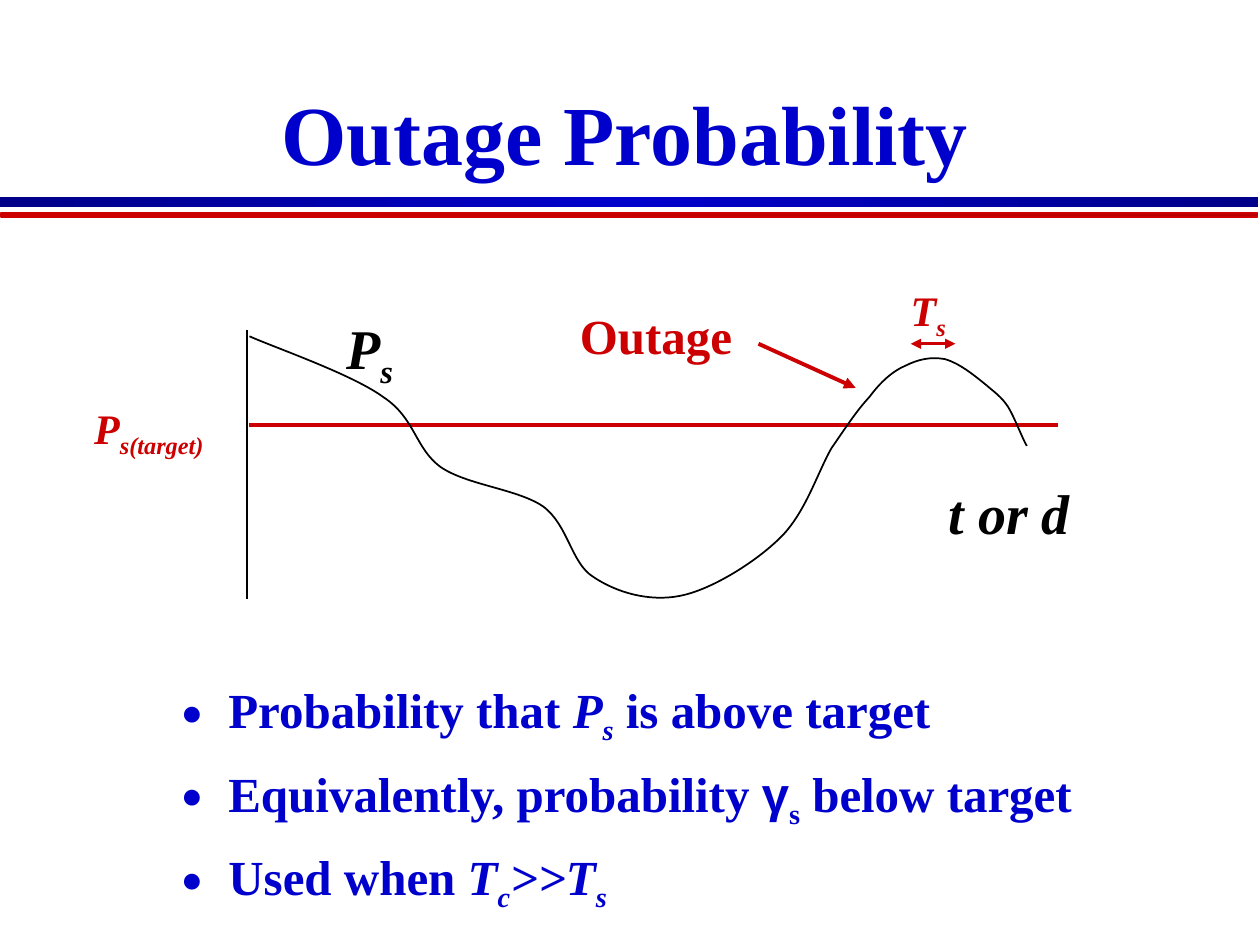
from copy import deepcopy
from itertools import chain

from lxml.etree import SubElement
from pptx import Presentation
from pptx.dml.color import RGBColor
from pptx.enum.shapes import MSO_CONNECTOR, MSO_SHAPE
from pptx.enum.text import MSO_ANCHOR, MSO_AUTO_SIZE, PP_ALIGN
from pptx.oxml.ns import qn
from pptx.util import Cm, Pt

BLUE = RGBColor(0x00, 0x00, 0xCC)
NAVY = RGBColor(0x00, 0x00, 0x89)
RED = RGBColor(0xCC, 0x00, 0x00)
DARK_RED = RGBColor(0xB9, 0x00, 0x00)
BLACK = RGBColor(0x00, 0x00, 0x00)
FONT = "Times New Roman"

# Content: each text is a list of (words, style); i = italic, s = subscript, g = Greek
TITLE = [("Outage Probability", "")]
POINTS = [
    [("Probability that ", ""), ("P", "i"), ("s", "is"), (" is above target", "")],
    [("Equivalently, probability ", ""), ("γ", "g"), ("s", "s"), (" below target", "")],
    [("Used when ", ""), ("T", "i"), ("c", "is"), (">>T", "i"), ("s", "is")],
]

# Labels: text, box in cm, size, colour, wrap
LABELS = [
    ([("P", "i"), ("s", "is")], (6.73, 6.2, 1.52, 1.6), 32, BLACK, False),
    ([("P", "i"), ("s(target)", "is")], (1.65, 7.98, 3.05, 1.27), 24, RED, False),
    ([("Outage", "")], (11.44, 6.03, 4.17, 1.45), 28, RED, True),
    ([("T", "i"), ("s", "is")], (18.11, 5.61, 1.32, 1.27), 24, RED, False),
    ([(" t or d", "i")], (18.59, 9.53, 3.3, 1.6), 32, BLACK, False),
]

# Lines: start, end in cm, colour, width, ends that carry an arrowhead
LINES = [
    ((4.98, 6.66), (4.98, 12.07), BLACK, 1, ()),
    ((5.02, 8.57), (21.33, 8.57), RED, 2.25, ()),
    ((15.29, 6.93), (17.25, 7.82), RED, 2.25, ("tailEnd",)),
    ((18.36, 6.93), (19.26, 6.93), RED, 1.5, ("headEnd", "tailEnd")),
]

# Received power over time: a start, then two control points and an end per segment
POWER_START = (5.03, 6.78)
POWER_SEGMENTS = [
    ((5.49, 6.99), (7.09, 7.54), (7.72, 8.0)),
    ((8.38, 8.43), (8.36, 9.04), (8.89, 9.42)),
    ((9.42, 9.78), (10.44, 9.86), (10.95, 10.21)),
    ((11.46, 10.59), (11.51, 11.35), (11.96, 11.63)),
    ((12.42, 11.94), (13.08, 12.14), (13.72, 12.01)),
    ((14.33, 11.89), (15.21, 11.35), (15.72, 10.85)),
    ((16.23, 10.36), (16.48, 9.53), (16.76, 9.04)),
    ((17.07, 8.59), (17.27, 8.28), (17.53, 8.0)),
    ((17.75, 7.7), (18.01, 7.47), (18.26, 7.37)),
    ((18.52, 7.24), (18.77, 7.19), (19.05, 7.24)),
    ((19.33, 7.32), (19.61, 7.54), (19.89, 7.77)),
]
TAIL_SEGMENTS = [
    ((20.04, 7.9), (20.19, 8.0), (20.32, 8.2)),
    ((20.45, 8.41), (20.62, 8.86), (20.7, 8.99)),
]


def place(shape, box):
    shape.left, shape.top, shape.width, shape.height = map(Cm, box)


def write(paragraph, parts, size, color, align=PP_ALIGN.LEFT):
    paragraph.alignment = align
    for words, style in parts:
        run = paragraph.add_run()
        run.text = words
        font = run.font
        font.name = "Arial" if "g" in style else FONT
        font.size, font.bold, font.italic = Pt(size), True, "i" in style
        font.color.rgb = color
        if "s" in style:
            run._r.get_or_add_rPr().set("baseline", "-25000")


def add_bullet(paragraph):
    props = paragraph._p.get_or_add_pPr()
    props.set("marL", str(Cm(0.96)))
    props.set("indent", str(-Cm(0.96)))
    SubElement(SubElement(props, qn("a:buClr")), qn("a:srgbClr"), val=str(BLUE))
    SubElement(props, qn("a:buSzPct"), val="75000")
    SubElement(props, qn("a:buFont"), typeface=FONT)
    SubElement(props, qn("a:buChar"), char="●")


def add_band(shapes, box, first, last):
    band = shapes.add_shape(MSO_SHAPE.RECTANGLE, *map(Cm, box))
    band.shadow.inherit = False
    band.fill.gradient()
    band.fill.gradient_angle = 0
    for stop, color in zip(band.fill.gradient_stops, (first, last)):
        stop.color.rgb = color
    return band


def add_line(shapes, start, end, color, width, arrow_ends):
    line = shapes.add_connector(MSO_CONNECTOR.STRAIGHT, *map(Cm, start + end))
    line.line.color.rgb = color
    line.line.width = Pt(width)
    for arrow_end in arrow_ends:
        SubElement(line.line._get_or_add_ln(), qn("a:" + arrow_end), type="triangle")
    SubElement(line._element.spPr, qn("a:effectLst"))


def add_curve(shapes, start, segments):
    builder = shapes.build_freeform(*map(Cm, start))
    points = [tuple(map(Cm, point)) for point in chain.from_iterable(segments)]
    builder.add_line_segments(points, close=False)
    curve = builder.convert_to_shape()
    curve.shadow.inherit = False
    curve.fill.background()
    curve.line.color.rgb = BLACK
    curve.line.width = Pt(1)

    # Join every three straight steps into one Bézier segment
    outline = curve._element.spPr.find(".//" + qn("a:path"))
    steps = outline.findall(qn("a:lnTo"))
    for first in range(0, len(steps), 3):
        segment = SubElement(outline, qn("a:cubicBezTo"))
        for step in steps[first:first + 3]:
            segment.append(step[0])
            outline.remove(step)


def main():
    deck = Presentation()
    deck.slide_width, deck.slide_height = Cm(25.4), Cm(19.05)
    slide = deck.slides.add_slide(deck.slide_layouts[1])
    shapes = slide.shapes

    # Title and list
    title, body = slide.placeholders
    place(title, (1.7, 0.62, 21.79, 3.18))
    place(body, (3.39, 13.44, 19.1, 3.96))
    for holder in (title, body):
        holder.text_frame.auto_size = MSO_AUTO_SIZE.NONE
    title.text_frame.vertical_anchor = MSO_ANCHOR.BOTTOM
    write(title.text_frame.paragraphs[0], TITLE, 48, BLUE, align=PP_ALIGN.CENTER)
    for number, point in enumerate(POINTS):
        frame = body.text_frame
        paragraph = frame.add_paragraph() if number else frame.paragraphs[0]
        write(paragraph, point, 28, BLUE)
        paragraph.line_spacing = 1.1
        add_bullet(paragraph)

    # Bands under the title; the blue one is brightest in the middle
    blue_band = add_band(shapes, (0, 3.97, 25.37, 0.2), NAVY, BLUE)
    blue_band.line.fill.background()
    stops = blue_band._element.spPr.find(".//" + qn("a:gsLst"))
    stops.append(deepcopy(stops[0]))
    for stop, position in zip(stops, (0, 50000, 100000)):
        stop.set("pos", str(position))
    red_band = add_band(shapes, (0.02, 4.3, 25.33, 0.07), RED, DARK_RED)
    red_band.line.color.rgb = RED
    red_band.line.width = Pt(1)

    # Diagram, kept together as one group
    diagram = shapes.add_group_shape().shapes
    for line in LINES:
        add_line(diagram, *line)
    add_curve(diagram, POWER_START, POWER_SEGMENTS)
    add_curve(diagram, POWER_SEGMENTS[-1][-1], TAIL_SEGMENTS)
    for parts, box, size, color, wrap in LABELS:
        label = diagram.add_textbox(*map(Cm, box)).text_frame
        label.word_wrap = wrap
        label.auto_size = MSO_AUTO_SIZE.SHAPE_TO_FIT_TEXT
        write(label.paragraphs[0], parts, size, color)

    deck.save("out.pptx")


if __name__ == "__main__":
    main()
